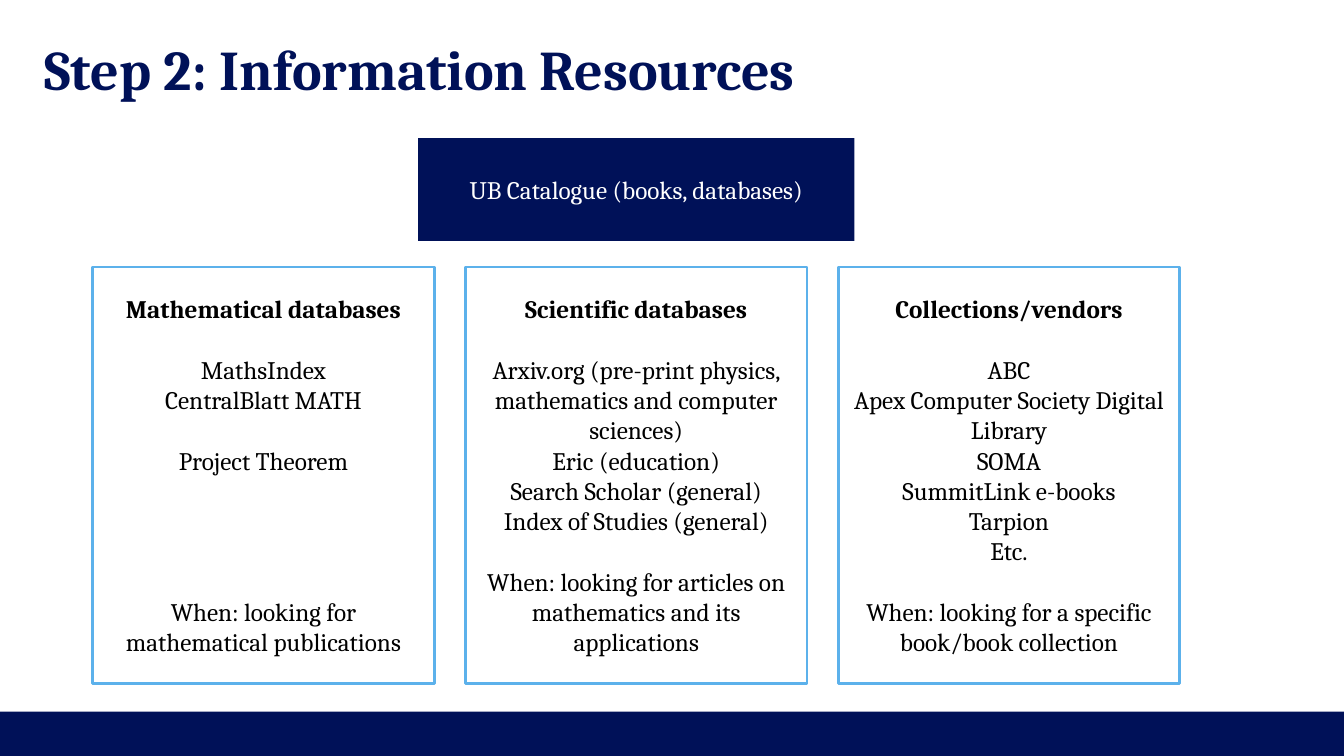
from pptx import Presentation
from pptx.dml.color import RGBColor
from pptx.enum.shapes import MSO_SHAPE
from pptx.enum.text import MSO_ANCHOR, MSO_AUTO_SIZE, PP_ALIGN
from pptx.util import Inches, Pt

RECTANGLE, PROCESS = MSO_SHAPE.RECTANGLE, MSO_SHAPE.FLOWCHART_PROCESS
LEFT, CENTER = PP_ALIGN.LEFT, PP_ALIGN.CENTER
MIDDLE = MSO_ANCHOR.MIDDLE
NO_AUTOFIT = MSO_AUTO_SIZE.NONE

TITLE = "Step 2: Information Resources"
CATALOGUE = "UB Catalogue (books, databases)"
# each entry: text, empty lines before it
RESOURCES = [
    ("Mathematical databases", [
        ("MathsIndex", 1),
        ("CentralBlatt MATH", 0),
        ("Project Theorem", 1),
        ("When: looking for mathematical publications", 4),
    ]),
    ("Scientific databases", [
        ("Arxiv.org (pre-print physics, mathematics and computer sciences)", 1),
        ("Eric (education)", 0),
        ("Search Scholar (general)", 0),
        ("Index of Studies (general)", 0),
        ("When: looking for articles on mathematics and its applications", 1),
    ]),
    ("Collections/vendors", [
        ("ABC", 1),
        ("Apex Computer Society Digital Library", 0),
        ("SOMA", 0),
        ("SummitLink e-books", 0),
        ("Tarpion", 0),
        ("Etc.", 0),
        ("When: looking for a specific book/book collection", 1),
    ]),
]

COLORS = {"navy": "001158", "sky": "5CB1EB", "white": "FFFFFF", "black": "000000"}
FONT = "Cambria"
BODY_SIZE, LINE_HEIGHT = 18, 21.6
SLIDE_WIDTH, SLIDE_HEIGHT = 13.34, 7.5
FOOTER_HEIGHT = 0.44
MARGIN = 0.44
COLUMN_LEFT, COLUMN_TOP = 0.92, 2.65
COLUMN_WIDTH, COLUMN_HEIGHT, COLUMN_GAP = 3.39, 4.13, 0.31
CATALOGUE_TOP, CATALOGUE_WIDTH, CATALOGUE_HEIGHT = 1.37, 4.33, 1.02


def color(name):
    return RGBColor.from_string(COLORS[name])


def add_text(frame, text, size=BODY_SIZE, ink="black", bold=False,
             align=CENTER, lines_before=0, first=False):
    para = frame.paragraphs[0] if first else frame.add_paragraph()
    para.alignment = align
    if lines_before:
        para.space_before = Pt(lines_before * LINE_HEIGHT)
    span = para.add_run()
    span.text = text
    span.font.name = FONT
    span.font.size = Pt(size)
    span.font.bold = bold
    span.font.color.rgb = color(ink)


def add_box(page, kind, left, top, width, height, fill, line=None):
    box = page.shapes.add_shape(
        kind, Inches(left), Inches(top), Inches(width), Inches(height))
    box.shadow.inherit = False
    box.fill.solid()
    box.fill.fore_color.rgb = color(fill)
    if line:
        box.line.color.rgb = color(line)
        box.line.width = Pt(2)
    else:
        box.line.fill.background()
    box.text_frame.word_wrap = True
    box.text_frame.vertical_anchor = MIDDLE
    return box


def place_title(page):
    title = page.shapes.title
    title.left, title.top = Inches(MARGIN), Inches(MARGIN)
    title.width, title.height = Inches(SLIDE_WIDTH - 2 * MARGIN), Inches(0.47)
    frame = title.text_frame
    frame.margin_left = frame.margin_right = 0
    frame.margin_top = frame.margin_bottom = 0
    frame.vertical_anchor = MIDDLE
    frame.auto_size = NO_AUTOFIT
    add_text(frame, TITLE, size=40, ink="navy", bold=True, align=LEFT, first=True)


def main():
    deck = Presentation()
    deck.slide_width, deck.slide_height = Inches(SLIDE_WIDTH), Inches(SLIDE_HEIGHT)
    page = deck.slides.add_slide(deck.slide_layouts[5])

    add_box(page, RECTANGLE, 0, SLIDE_HEIGHT - FOOTER_HEIGHT,
            SLIDE_WIDTH, FOOTER_HEIGHT, "navy")
    place_title(page)

    count = len(RESOURCES)
    grid_width = count * COLUMN_WIDTH + (count - 1) * COLUMN_GAP
    catalogue_left = COLUMN_LEFT + (grid_width - CATALOGUE_WIDTH) / 2
    catalogue = add_box(page, RECTANGLE, catalogue_left, CATALOGUE_TOP,
                        CATALOGUE_WIDTH, CATALOGUE_HEIGHT, "navy")
    add_text(catalogue.text_frame, CATALOGUE, ink="white", first=True)

    for index, (heading, entries) in enumerate(RESOURCES):
        left = COLUMN_LEFT + index * (COLUMN_WIDTH + COLUMN_GAP)
        column = add_box(page, PROCESS, left, COLUMN_TOP,
                         COLUMN_WIDTH, COLUMN_HEIGHT, "white", line="sky")
        add_text(column.text_frame, heading, bold=True, first=True)
        for text, lines_before in entries:
            add_text(column.text_frame, text, lines_before=lines_before)

    deck.save("out.pptx")


if __name__ == "__main__":
    main()
